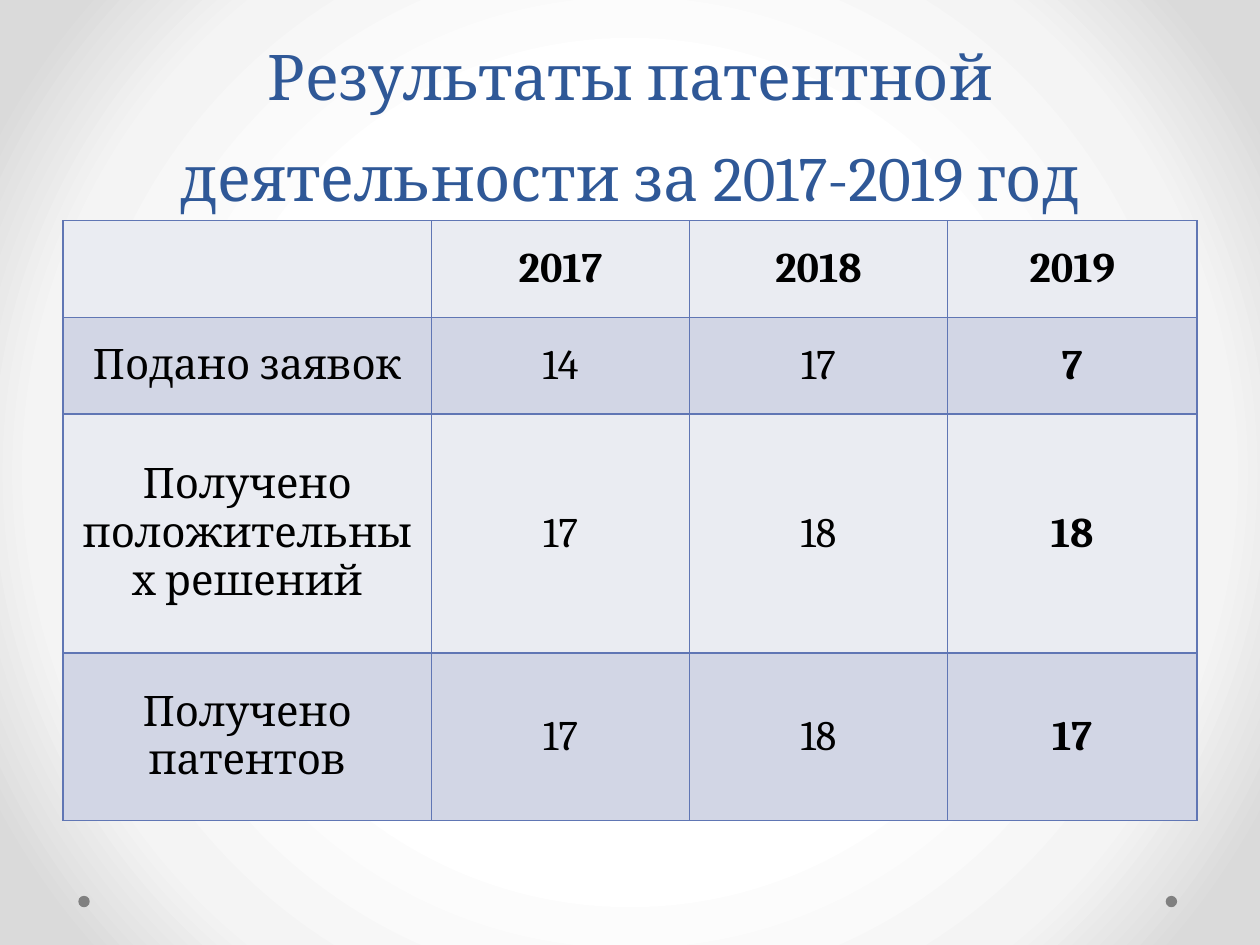
from lxml import etree
from pptx import Presentation
from pptx.dml.color import RGBColor
from pptx.enum.shapes import MSO_SHAPE as SHAPE
from pptx.enum.text import MSO_ANCHOR as ANCHOR, PP_ALIGN as ALIGN
from pptx.oxml import parse_xml
from pptx.oxml.ns import nsdecls, qn
from pptx.util import Cm, Pt

BLUE = RGBColor(0x2F, 0x58, 0x97)
BORDER = RGBColor(0x60, 0x76, 0xB4)
LIGHT = RGBColor(0xEA, 0xEC, 0xF2)
DARK = RGBColor(0xD2, 0xD6, 0xE5)
GREY = RGBColor(0x80, 0x80, 0x80)
BLACK = RGBColor(0, 0, 0)
GLOW = [
    (50, RGBColor(0xFF, 0xFF, 0xFF)),
    (76, RGBColor(0xF4, 0xF4, 0xF4)),
    (92, RGBColor(0xDA, 0xDA, 0xDA)),
]

ROWS = [
    ("", "2017", "2018", "2019"),
    ("Подано заявок", "14", "17", "7"),
    ("Получено положительных решений", "17", "18", "18"),
    ("Получено патентов", "17", "18", "17"),
]
COL_WIDTHS = [7.43, 5.2, 5.2, 5.03]
ROW_HEIGHTS = [1.95, 1.95, 4.81, 3.38]


class Deck:
    """Holds the style and the current slide and draws each kind of element."""

    font = "Cambria"

    def __init__(self, width, height):
        self.prs = Presentation()
        self.prs.slide_width, self.prs.slide_height = Cm(width), Cm(height)
        self.s = self.prs.slides.add_slide(self.prs.slide_layouts[6])

    def background(self, stops):
        self.s.background.fill.solid()
        solid = self.s.element.find(".//" + qn("p:bgPr")).find(qn("a:solidFill"))
        gs = "".join(
            f'<a:gs pos="{pos * 1000}"><a:srgbClr val="{color}"/></a:gs>'
            for pos, color in stops
        )
        grad = parse_xml(
            f'<a:gradFill {nsdecls("a")} rotWithShape="1"><a:gsLst>{gs}</a:gsLst>'
            '<a:path path="circle"><a:fillToRect l="50000" t="50000" r="50000" b="50000"/>'
            "</a:path></a:gradFill>"
        )
        solid.getparent().replace(solid, grad)

    def dot(self, x, y, size):
        sp = self.s.shapes.add_shape(SHAPE.OVAL, Cm(x), Cm(y), Cm(size), Cm(size))
        sp.shadow.inherit = False
        sp.fill.solid()
        sp.fill.fore_color.rgb = GREY
        sp.line.fill.background()

    def set_text(self, tf, text, size, color, bold=False):
        tf.text = text
        p = tf.paragraphs[0]
        p.alignment = ALIGN.CENTER
        for r in p.runs:
            r.font.name, r.font.size, r.font.bold = self.font, Pt(size), bold
            r.font.color.rgb = color

    def title(self, text, x, y, w, h):
        tf = self.s.shapes.add_textbox(Cm(x), Cm(y), Cm(w), Cm(h)).text_frame
        tf.word_wrap = True
        tf.vertical_anchor = ANCHOR.BOTTOM
        self.set_text(tf, text, 36, BLUE)
        tf.paragraphs[0].line_spacing = Pt(58)

    def border(self, cell):
        tcPr = cell._tc.get_or_add_tcPr()
        for i, side in enumerate(("lnL", "lnR", "lnT", "lnB")):
            ln = etree.Element(qn(f"a:{side}"), w=str(Pt(1)))
            fill = etree.SubElement(ln, qn("a:solidFill"))
            etree.SubElement(fill, qn("a:srgbClr"), val=str(BORDER))
            tcPr.insert(i, ln)

    def table(self, rows, x, y, widths, heights):
        table = self.s.shapes.add_table(
            len(rows), len(widths), Cm(x), Cm(y), Cm(sum(widths)), Cm(sum(heights))
        ).table
        for col, width in zip(table.columns, widths):
            col.width = Cm(width)
        for i, (row, height) in enumerate(zip(rows, heights)):
            table.rows[i].height = Cm(height)
            for j, text in enumerate(row):
                cell = table.cell(i, j)
                cell.fill.solid()
                cell.fill.fore_color.rgb = DARK if i % 2 else LIGHT
                cell.vertical_anchor = ANCHOR.MIDDLE
                bold = i == 0 or j == len(row) - 1
                self.set_text(cell.text_frame, text, 24, BLACK, bold)
                self.border(cell)

    def save(self):
        self.prs.save("out.pptx")


def main():
    deck = Deck(25.4, 19.05)
    deck.background(GLOW)
    for x in (23.5, 1.58):
        deck.dot(x, 18.06, 0.23)
    deck.title("Результаты патентной деятельности за 2017-2019 год", 1.27, 0, 22.86, 4.45)
    deck.table(ROWS, 1.27, 4.45, COL_WIDTHS, ROW_HEIGHTS)
    deck.save()


if __name__ == "__main__":
    main()
